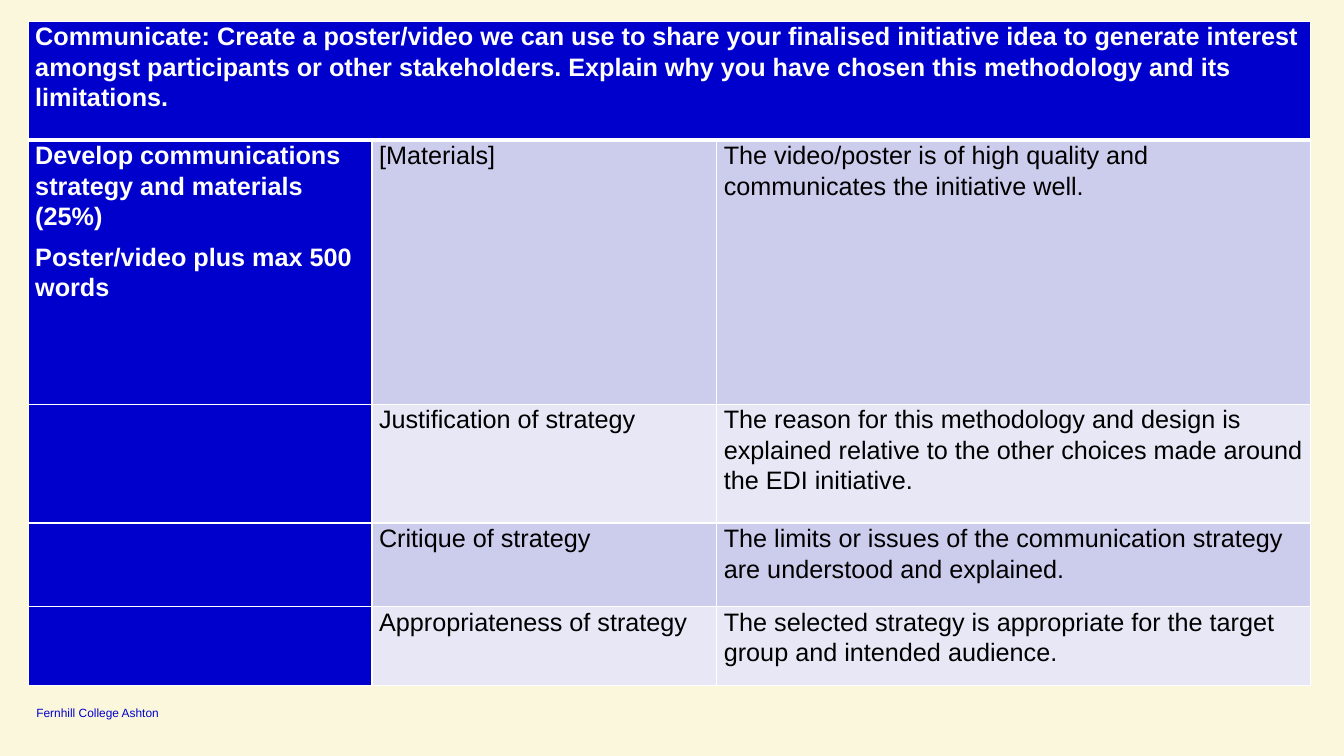
"""Build a slide with the marking criteria for the communication task."""
from dataclasses import dataclass

from lxml import etree
from pptx import Presentation
from pptx import util as u
from pptx.dml.color import RGBColor
from pptx.enum import shapes, text
from pptx.oxml import ns


@dataclass(frozen=True)
class Theme:
    font: str = "Arial"
    cream: str = "FBF7DC"
    blue: str = "0000CD"
    bands: tuple = ("CCCCED", "E7E7F6")
    white: str = "FFFFFF"
    black: str = "000000"
    table_size: float = 18
    footer_size: float = 8.5
    thin: float = 1
    thick: float = 3


theme = Theme()


def write(frame, lines, size, color, bold=False, spacing=1.0, after=0):
    for index, line in enumerate(lines):
        para = frame.paragraphs[0] if index == 0 else frame.add_paragraph()
        para.line_spacing = spacing
        para.space_after = u.Pt(after)
        span = para.add_run()
        span.text = line
        span.font.name = theme.font
        span.font.size = u.Pt(size)
        span.font.bold = bold
        span.font.color.rgb = RGBColor.from_string(color)


def add_border(cell, side, width):
    line = etree.SubElement(cell._tc.get_or_add_tcPr(), ns.qn(f"a:ln{side}"), w=str(u.Pt(width)))
    fill = etree.SubElement(line, ns.qn("a:solidFill"))
    etree.SubElement(fill, ns.qn("a:srgbClr"), val=theme.white)


deck = Presentation()
deck.slide_width = u.Inches(13.33)
deck.slide_height = u.Inches(7.5)
page = deck.slides.add_slide(deck.slide_layouts[6])
page.background.fill.solid()
page.background.fill.fore_color.rgb = RGBColor.from_string(theme.cream)

footer = page.shapes.add_textbox(u.Inches(0.36), u.Inches(6.99), u.Inches(1.55), u.Inches(0.15))
frame = footer.text_frame
frame.margin_left = frame.margin_top = frame.margin_right = frame.margin_bottom = 0
frame.vertical_anchor = text.MSO_ANCHOR.BOTTOM
frame.word_wrap = True
write(frame, ["Fernhill College Ashton"], theme.footer_size, theme.blue)

criteria = [
    [["Communicate: Create a poster/video we can use to share your finalised initiative idea to "
      "generate interest amongst participants or other stakeholders. Explain why you have chosen "
      "this methodology and its limitations."], [], []],
    [["Develop communications strategy and materials (25%)", "Poster/video plus max 500 words"],
     ["[Materials]"],
     ["The video/poster is of high quality and communicates the initiative well."]],
    [[], ["Justification of strategy"],
     ["The reason for this methodology and design is explained relative to the other choices "
      "made around the EDI initiative."]],
    [[], ["Critique of strategy"],
     ["The limits or issues of the communication strategy are understood and explained."]],
    [[], ["Appropriateness of strategy"],
     ["The selected strategy is appropriate for the target group and intended audience."]],
]
widths = [3.41, 3.42, 5.89]
heights = [1.18, 2.62, 1.18, 0.83, 0.78]

table = page.shapes.add_table(len(heights), len(widths), u.Inches(0.28), u.Inches(0.21),
                              u.Inches(sum(widths)), u.Inches(sum(heights))).table
for column, width in zip(table.columns, widths):
    column.width = u.Inches(width)
for row, height in zip(table.rows, heights):
    row.height = u.Inches(height)
table.cell(0, 0).merge(table.cell(0, len(widths) - 1))

for row_index, row in enumerate(criteria):
    for column_index, lines in enumerate(row):
        cell = table.cell(row_index, column_index)
        heading = row_index == 0 or column_index == 0
        cell.margin_left = cell.margin_right = u.Inches(0.07)
        cell.margin_top = cell.margin_bottom = 0
        for side in "LRTB":
            under_header = (row_index, side) in ((0, "B"), (1, "T"))
            add_border(cell, side, theme.thick if under_header else theme.thin)
        cell.fill.solid()
        band = theme.bands[(row_index - 1) % 2]
        cell.fill.fore_color.rgb = RGBColor.from_string(theme.blue if heading else band)
        write(cell.text_frame, lines, theme.table_size, theme.white if heading else theme.black,
              bold=heading, spacing=1.07, after=8)

deck.save("out.pptx")
